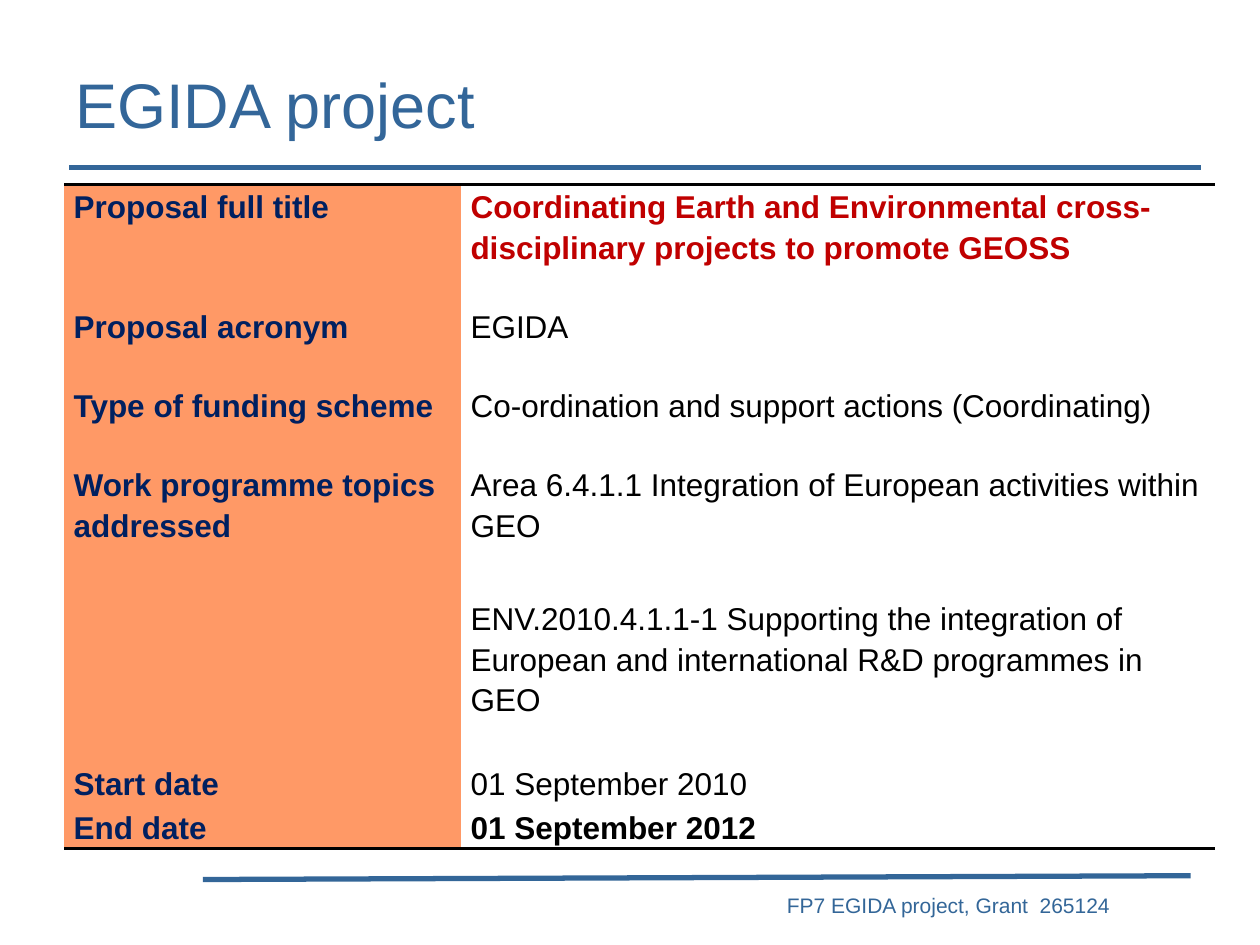
from lxml import etree
from pptx import Presentation
from pptx.dml.color import RGBColor
from pptx.enum.shapes import MSO_CONNECTOR
from pptx.enum.text import MSO_ANCHOR, PP_ALIGN
from pptx.oxml.ns import qn
from pptx.util import Pt

LEFT, RIGHT, JUSTIFY = PP_ALIGN.LEFT, PP_ALIGN.RIGHT, PP_ALIGN.JUSTIFY
FONT = "Arial"
PLAIN_TABLE_STYLE = "{2D5ABB26-0587-4C30-8999-92F81FD0307C}"
COLORS = {
    "title": "336699", "footer": "336698", "label": "002060", "label_fill": "FF9966",
    "highlight": "C00000", "text": "000000", "white": "FFFFFF",
}

TITLE = "EGIDA project"
FOOTER = "FP7 EGIDA project, Grant  265124"
# row height, label, label alignment, value paragraphs, value colour, value bold
ROWS = [
    (68.6, "Proposal full title", JUSTIFY,
     ["Coordinating Earth and Environmental cross-disciplinary projects to promote GEOSS"],
     "highlight", True),
    (45.1, "Proposal acronym", JUSTIFY, ["EGIDA"], "text", False),
    (45.1, "Type of funding scheme", JUSTIFY,
     ["Co-ordination and support actions (Coordinating)"], "text", False),
    (171, "Work programme topics addressed", LEFT,
     ["Area 6.4.1.1 Integration of European activities within GEO",
      "ENV.2010.4.1.1-1 Supporting the integration of European and international "
      "R&D programmes in GEO"], "text", False),
    (23.4, "Start date", JUSTIFY, ["01 September 2010"], "text", False),
    (23.4, "End date", JUSTIFY, ["01 September 2012"], "text", True),
]
COLUMN_WIDTHS = (226.8, 430.6)
# x1, y1, x2, y2, colour
RULES = [
    (39.6, 95.8, 686.2, 95.8, "title"),
    (115.9, 502.6, 680.4, 500.4, "footer"),
]


def rgb(name):
    return RGBColor.from_string(COLORS[name])


def write(p, text, size, color, bold=False, align=LEFT):
    p.alignment = align
    r = p.add_run()
    r.text = text
    for key, value in {"name": FONT, "size": Pt(size), "bold": bold}.items():
        setattr(r.font, key, value)
    r.font.color.rgb = rgb(color)


def add_rule(s, x1, y1, x2, y2, color):
    line = s.shapes.add_connector(MSO_CONNECTOR.STRAIGHT, Pt(x1), Pt(y1), Pt(x2), Pt(y2))
    line.line.color.rgb = rgb(color)
    line.line.width = Pt(3)
    etree.SubElement(line._element.spPr, qn("a:effectLst"))


def add_border(cell, side):
    """Draw a black edge; side is lnT for the top or lnB for the bottom."""
    ln = etree.Element(qn(f"a:{side}"), w=str(Pt(2)))
    fill = etree.SubElement(ln, qn("a:solidFill"))
    etree.SubElement(fill, qn("a:srgbClr"), val=COLORS["text"])
    cell._tc.get_or_add_tcPr().insert(0, ln)


def fill_cell(cell, paragraphs, fill, color, bold, align=LEFT):
    cell.margin_left = cell.margin_right = Pt(5.4)
    cell.margin_top = cell.margin_bottom = 0
    cell.fill.solid()
    cell.fill.fore_color.rgb = rgb(fill)
    tf = cell.text_frame
    for i, text in enumerate(paragraphs):
        p = tf.add_paragraph() if i else tf.paragraphs[0]
        p.line_spacing = 1.15
        if i:
            p.space_before = Pt(30.5)
        write(p, text, 18, color, bold, align)


def add_project_table(s):
    heights = [row[0] for row in ROWS]
    frame = s.shapes.add_table(len(ROWS), len(COLUMN_WIDTHS), Pt(36.7), Pt(105.6),
                               Pt(sum(COLUMN_WIDTHS)), Pt(sum(heights)))
    table = frame.table
    table.first_row = table.horz_banding = False
    table._tbl.tblPr.find(qn("a:tableStyleId")).text = PLAIN_TABLE_STYLE
    for column, width in zip(table.columns, COLUMN_WIDTHS):
        column.width = Pt(width)
    for i, (height, label, align, values, color, bold) in enumerate(ROWS):
        table.rows[i].height = Pt(height)
        fill_cell(table.cell(i, 0), [label], "label_fill", "label", True, align)
        fill_cell(table.cell(i, 1), values, "white", color, bold)
    for c in range(len(COLUMN_WIDTHS)):
        add_border(table.cell(0, c), "lnT")
        add_border(table.cell(len(ROWS) - 1, c), "lnB")


def main():
    prs = Presentation()
    prs.slide_width, prs.slide_height = Pt(720), Pt(540)
    s = prs.slides.add_slide(prs.slide_layouts[5])

    for rule in RULES:
        add_rule(s, *rule)

    footer = s.shapes.add_textbox(Pt(157.7), Pt(506.2), Pt(483.8), Pt(21.6))
    footer.text_frame.word_wrap = True
    write(footer.text_frame.paragraphs[0], FOOTER, 12, "footer", align=RIGHT)

    title = s.shapes.title
    title.left, title.top, title.width, title.height = Pt(36), Pt(33.8), Pt(648), Pt(50.4)
    title.text_frame.vertical_anchor = MSO_ANCHOR.MIDDLE
    write(title.text_frame.paragraphs[0], TITLE, 36, "title")

    add_project_table(s)
    prs.save("out.pptx")


if __name__ == "__main__":
    main()
